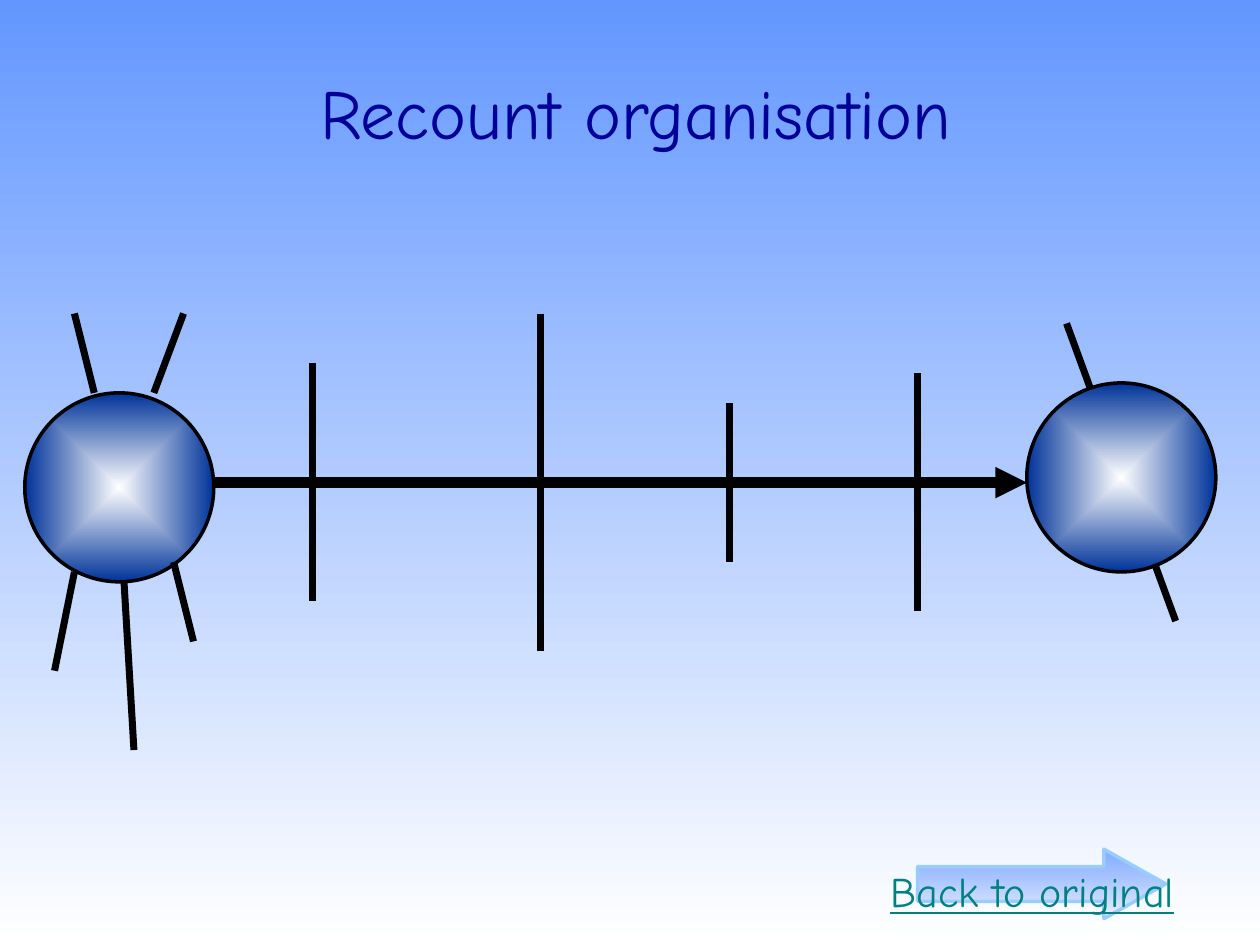
import pptx
import pptx.dml.color
import pptx.enum.shapes
import pptx.enum.text
import pptx.oxml
import pptx.oxml.ns
import pptx.util
from lxml import etree

Cm = pptx.util.Cm
Pt = pptx.util.Pt
Shape = pptx.enum.shapes.MSO_SHAPE
Align = pptx.enum.text.PP_ALIGN
qn = pptx.oxml.ns.qn
COLORS = {"sky": "6397FF", "white": "FFFFFF", "navy": "003399", "black": "000000",
          "title": "000099", "link": "008080", "pale": "EFF3FF", "edge": "99CCFF"}
rgb = {name: pptx.dml.color.RGBColor.from_string(value) for name, value in COLORS.items()}


def set_gradient(fill, first, last):
    fill.gradient()
    fill.gradient_angle = 270
    for stop, color in zip(fill.gradient_stops, (first, last)):
        stop.color.rgb = rgb[color]


def add_stroke(x1, y1, x2, y2, width=4):
    stroke = slide.shapes.add_connector(
        pptx.enum.shapes.MSO_CONNECTOR.STRAIGHT, Cm(x1), Cm(y1), Cm(x2), Cm(y2))
    stroke.line.color.rgb = rgb["black"]
    stroke.line.width = Pt(width)
    etree.SubElement(stroke.element.spPr, qn("a:effectLst"))
    return stroke


presentation = pptx.Presentation()
presentation.slide_width = Cm(25.4)
presentation.slide_height = Cm(19.05)
slide = presentation.slides.add_slide(presentation.slide_layouts[6])
set_gradient(slide.background.fill, "sky", "white")

# Timeline with its arrowhead
timeline_y = 9.73
timeline = add_stroke(4.29, timeline_y, 20.7, timeline_y, 6)
etree.SubElement(timeline.line._get_or_add_ln(), qn("a:tailEnd"), type="triangle")

# Event marks across the timeline
for x, top, bottom in [(6.3, 7.32, 12.12), (10.9, 6.32, 13.13),
                       (14.7, 8.13, 11.33), (18.5, 7.52, 12.32)]:
    add_stroke(x, top, x, bottom)

# Start and end circles; the end stroke passes behind its circle
for left, top, rays in [
    (0.5, 7.92, []),
    (20.7, 7.72, [(23.7, 12.52, 21.5, 6.52)]),
]:
    for ray in rays:
        add_stroke(*ray)
    circle = slide.shapes.add_shape(Shape.OVAL, Cm(left), Cm(top), Cm(3.81), Cm(3.81))
    circle.shadow.inherit = False
    circle.line.color.rgb = rgb["black"]
    circle.line.width = Pt(2)
    set_gradient(circle.fill, "white", "navy")
    linear = circle.element.spPr.find(qn("a:gradFill")).find(qn("a:lin"))
    radial = etree.Element(qn("a:path"), path="shape")
    etree.SubElement(radial, qn("a:fillToRect"), l="50000", t="50000", r="50000", b="50000")
    linear.getparent().replace(linear, radial)

# Rays around the start circle
for ray in [(1.9, 7.92, 1.5, 6.32), (3.1, 7.92, 3.7, 6.32), (2.7, 15.12, 2.5, 11.73),
            (1.1, 13.52, 1.5, 11.53), (3.9, 12.93, 3.5, 11.33)]:
    add_stroke(*ray)

# Back arrow
back_arrow = slide.shapes.add_shape(Shape.RIGHT_ARROW, Cm(18.5), Cm(17.12), Cm(5), Cm(1.4))
back_arrow.shadow.inherit = False
back_arrow.adjustments[0] = 0.5
back_arrow.adjustments[1] = 0.89
back_arrow.line.color.rgb = rgb["edge"]
back_arrow.line.width = Pt(2)
set_gradient(back_arrow.fill, "sky", "pale")
sky_stop = next(back_arrow.element.spPr.iter(qn("a:srgbClr")))
etree.SubElement(sky_stop, qn("a:alpha"), val="77000")

# Title and back label
for wording, place, align, font_format, color in [
    ("Recount organisation", (1.7, 1.27, 22.23, 1.96), Align.CENTER,
     {"size": Pt(40), "name": "Comic Neue"}, "title"),
    ("Back to original", (17.7, 17.32, 7.21, 1.27), Align.LEFT,
     {"size": Pt(24), "name": "Comic Neue", "underline": True}, "link"),
]:
    label = slide.shapes.add_textbox(*map(Cm, place)).text_frame
    label.word_wrap = True
    paragraph = label.paragraphs[0]
    paragraph.alignment = align
    run = paragraph.add_run()
    run.text = wording
    run.font.color.rgb = rgb[color]
    for attribute, value in font_format.items():
        setattr(run.font, attribute, value)

presentation.save("out.pptx")
